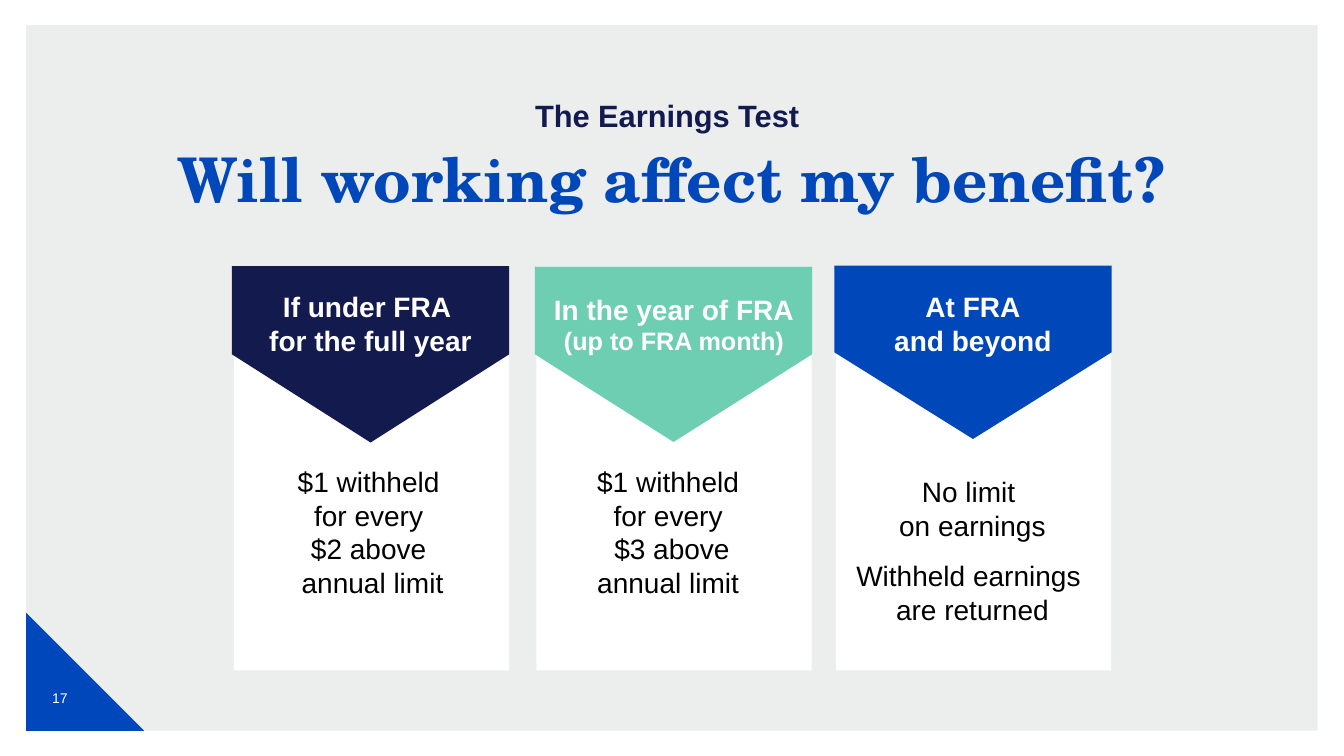
"""Build the earnings test slide with its three arrow-headed columns."""
from dataclasses import dataclass

from pptx import Presentation
from pptx.dml.color import RGBColor
from pptx.enum.shapes import MSO_SHAPE
from pptx.enum.text import MSO_ANCHOR, MSO_AUTO_SIZE, PP_ALIGN
from pptx.oxml import parse_xml
from pptx.oxml.ns import nsdecls, qn
from pptx.shapes.autoshape import Shape
from pptx.slide import Slide
from pptx.util import Emu, Pt

PX = 9144


@dataclass(frozen=True)
class Theme:
    navy: str = "131A4D"
    blue: str = "0047BA"
    corner: str = "0047BB"
    mint: str = "6ECEB1"
    gray: str = "D0D3D4"
    white: str = "FFFFFF"
    black: str = "000000"
    sans: str = "Arial"
    serif: str = "TeX Gyre Schola"
    title: int = 44
    subtitle: int = 22
    text: int = 20
    small: int = 18
    number: int = 10


THEME = Theme()


@dataclass(frozen=True)
class Box:
    left: int
    top: int
    width: int
    height: int

    def emu(self) -> tuple[Emu, Emu, Emu, Emu]:
        return (Emu(self.left * PX), Emu(self.top * PX),
                Emu(self.width * PX), Emu(self.height * PX))


@dataclass(frozen=True)
class Line:
    text: str
    size: int = THEME.text
    color: str = THEME.black
    bold: bool = False
    font: str = THEME.sans
    spacing: float = 1.0
    after: int = 0


@dataclass(frozen=True)
class Column:
    color: str
    card_left: int
    arrow: Box
    header_box: Box
    header: tuple[Line, ...]
    body_left: int
    body: tuple[Line, ...]
    inset: int = 0


def heading(text: str, size: int = THEME.text) -> Line:
    return Line(text, size, THEME.white, True)


COLUMNS = (
    Column(THEME.navy, 232, Box(280, 214, 175, 275), Box(232, 293, 271, 55),
           (heading("If under FRA \nfor the full year"),), 232,
           (Line("$1 withheld \nfor every \n$2 above \nannual limit"),)),
    Column(THEME.mint, 532, Box(581, 214, 174, 275), Box(531, 294, 275, 55),
           (heading("In the year of FRA"),
            heading("(up to FRA month)", THEME.small)), 529,
           (Line("$1 withheld \nfor every \n$3 above\nannual limit "),)),
    Column(THEME.blue, 829, Box(879, 212, 172, 275), Box(840, 293, 250, 55),
           (heading("At FRA\nand beyond"),), 827,
           (Line("No limit \non earnings", after=12),
            Line("Withheld earnings \nare returned", after=12)), 10),
)


def add_block(slide: Slide, kind: MSO_SHAPE, box: Box, color: str) -> Shape:
    block = slide.shapes.add_shape(kind, *box.emu())
    block.shadow.inherit = False
    block.fill.solid()
    block.fill.fore_color.rgb = RGBColor.from_string(color)
    block.line.fill.background()
    return block


def write(shape: Shape, lines: tuple[Line, ...], across: int = 10,
          down: int = 5, anchor: MSO_ANCHOR = MSO_ANCHOR.TOP) -> None:
    frame = shape.text_frame
    frame.word_wrap = True
    frame.auto_size = MSO_AUTO_SIZE.NONE
    frame.vertical_anchor = anchor
    frame.margin_left = frame.margin_right = Emu(across * PX)
    frame.margin_top = frame.margin_bottom = Emu(down * PX)
    for index, line in enumerate(lines):
        para = frame.add_paragraph() if index else frame.paragraphs[0]
        para.alignment = PP_ALIGN.CENTER
        para.line_spacing = line.spacing
        para.space_before = Pt(0)
        para.space_after = Pt(line.after)
        for row, text in enumerate(line.text.split("\n")):
            if row:
                para.add_line_break()
            span = para.add_run()
            span.text = text
            span.font.name = line.font
            span.font.size = Pt(line.size)
            span.font.bold = line.bold
            span.font.color.rgb = RGBColor.from_string(line.color)


def add_text(slide: Slide, box: Box, lines: tuple[Line, ...], across: int = 10,
             down: int = 5, anchor: MSO_ANCHOR = MSO_ANCHOR.TOP) -> None:
    write(slide.shapes.add_textbox(*box.emu()), lines, across, down, anchor)


def add_backdrop(slide: Slide) -> None:
    panel = add_block(slide, MSO_SHAPE.RECTANGLE,
                      Box(26, 25, 1281, 700), THEME.gray)
    color = panel._element.spPr.find(qn("a:solidFill")).find(qn("a:srgbClr"))
    color.append(parse_xml(f'<a:alpha {nsdecls("a")} val="40000"/>'))
    add_block(slide, MSO_SHAPE.RIGHT_TRIANGLE,
              Box(26, 608, 117, 117), THEME.corner)
    add_text(slide, Box(32, 663, 55, 58),
             (Line("17", THEME.number, THEME.white),), anchor=MSO_ANCHOR.MIDDLE)


def add_column(slide: Slide, column: Column) -> None:
    add_block(slide, MSO_SHAPE.RECTANGLE,
              Box(column.card_left, 264, 273, 401), THEME.white)
    add_text(slide, Box(column.body_left, 461, 275, 204), column.body,
             column.inset, column.inset)
    arrow = add_block(slide, MSO_SHAPE.PENTAGON, column.arrow, column.color)
    arrow.rotation = 90
    add_text(slide, column.header_box, column.header, anchor=MSO_ANCHOR.MIDDLE)


def add_titles(slide: Slide) -> None:
    add_text(slide, Box(163, 95, 1006, 50),
             (Line("The Earnings Test ", THEME.subtitle, THEME.navy, True,
                   spacing=0.9),), across=0)
    title = slide.shapes.title
    title.left, title.top, title.width, title.height = Box(
        163, 143, 1006, 65).emu()
    write(title, (Line("Will working affect my benefit?", THEME.title,
                       THEME.blue, True, THEME.serif, 0.9),), across=0)
    slide.shapes._spTree.append(title._element)


def main() -> None:
    deck = Presentation()
    deck.slide_width, deck.slide_height = Emu(1333 * PX), Emu(750 * PX)
    page = deck.slides.add_slide(deck.slide_layouts[5])
    add_backdrop(page)
    for column in COLUMNS:
        add_column(page, column)
    add_titles(page)
    deck.save("out.pptx")


if __name__ == "__main__":
    main()
